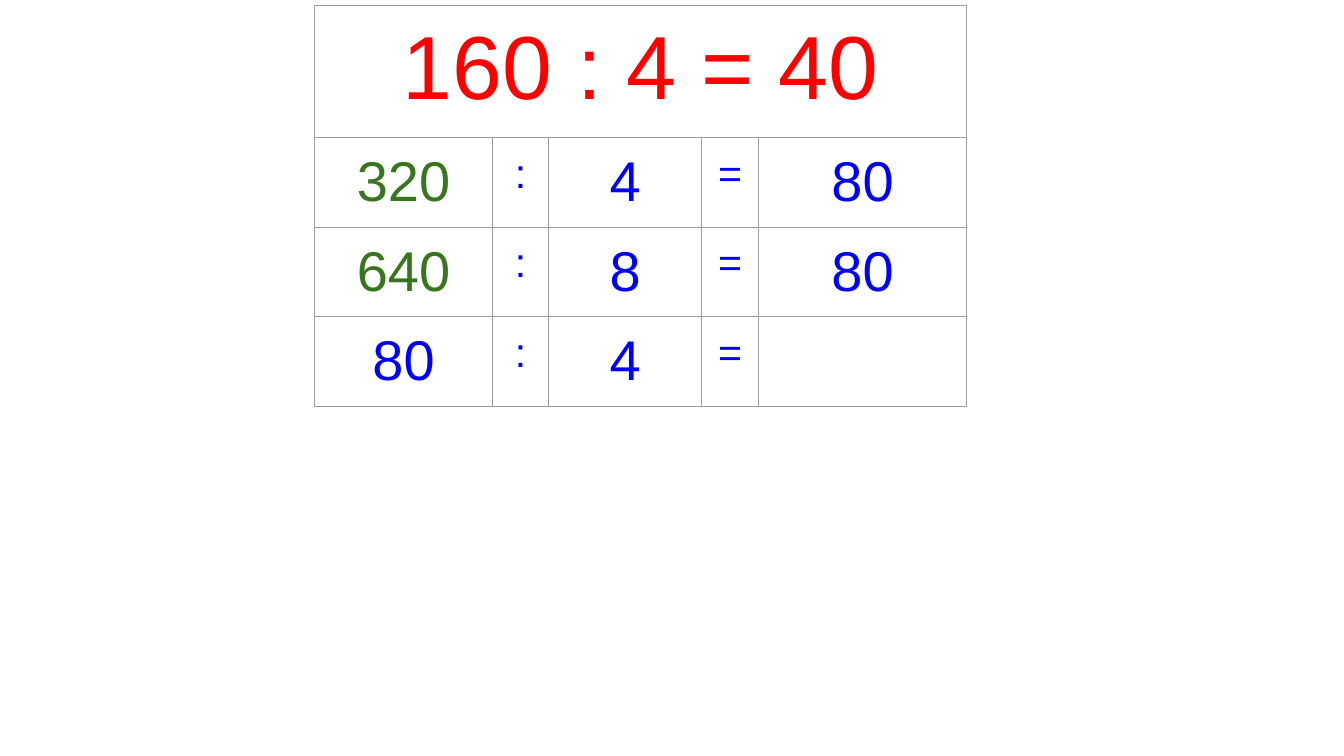
from lxml import etree
from pptx import Presentation
from pptx.dml.color import RGBColor
from pptx.enum.text import PP_ALIGN
from pptx.oxml.ns import qn
from pptx.util import Pt

CENTER = PP_ALIGN.CENTER
RED = RGBColor(0xFF, 0x00, 0x00)
GREEN = RGBColor(0x38, 0x76, 0x1D)
BLUE = RGBColor(0x00, 0x00, 0xFF)
GRAY = RGBColor(0x9E, 0x9E, 0x9E)

COL_WIDTHS = [95, 30.3, 82, 30.3, 111.7]
ROW_HEIGHTS = [71, 42.5, 43.9, 43.9]
ROWS = [
    ["160 : 4 = 40", "", "", "", ""],
    ["320", ":", "4", "=", "80"],
    ["640", ":", "8", "=", "80"],
    ["80", ":", "4", "=", ""],
]
GIVEN = ("320", "640")


def add_borders(cell):
    tc_pr = cell._tc.get_or_add_tcPr()
    for side in ("a:lnL", "a:lnR", "a:lnT", "a:lnB"):
        ln = etree.SubElement(tc_pr, qn(side), w=str(Pt(0.75)))
        fill = etree.SubElement(ln, qn("a:solidFill"))
        etree.SubElement(fill, qn("a:srgbClr"), val=str(GRAY))


prs = Presentation()
prs.slide_width, prs.slide_height = Pt(720), Pt(405)
s = prs.slides.add_slide(prs.slide_layouts[6])

frame = s.shapes.add_table(len(ROWS), len(COL_WIDTHS), Pt(168.7), Pt(2.9),
                           Pt(sum(COL_WIDTHS)), Pt(sum(ROW_HEIGHTS)))
table = frame.table
table.first_row = table.horz_banding = False
for column, width in zip(table.columns, COL_WIDTHS):
    column.width = Pt(width)
for row, height in zip(table.rows, ROW_HEIGHTS):
    row.height = Pt(height)
table.cell(0, 0).merge(table.cell(0, len(COL_WIDTHS) - 1))

for i, row in enumerate(ROWS):
    for j, text in enumerate(row):
        cell = table.cell(i, j)
        for side in ("left", "right", "top", "bottom"):
            setattr(cell, f"margin_{side}", Pt(7.2))
        add_borders(cell)
        cell.fill.background()
        if not text:
            continue
        if i == 0:
            size, color = 48, RED
        else:
            size = 22 if text in ":=" else 30
            color = GREEN if text in GIVEN else BLUE
        p = cell.text_frame.paragraphs[0]
        p.alignment = CENTER
        r = p.add_run()
        r.text = text
        for name, value in {"name": "Arial", "size": Pt(size)}.items():
            setattr(r.font, name, value)
        r.font.color.rgb = color

prs.save("out.pptx")
